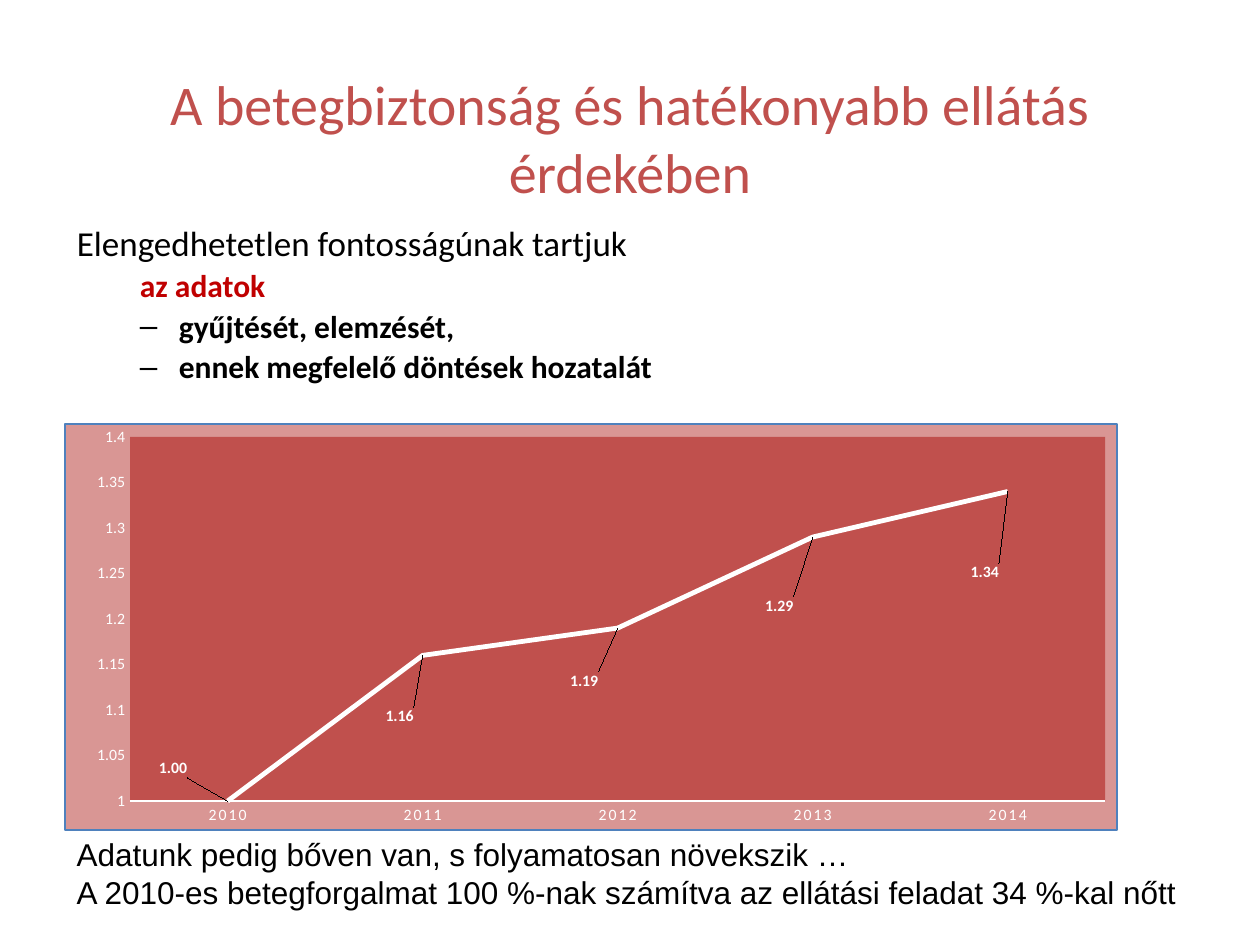
from dataclasses import dataclass

from lxml import etree
from pptx import Presentation
from pptx.chart.data import CategoryChartData
from pptx.dml.color import RGBColor
from pptx.enum.chart import XL_CHART_TYPE, XL_LABEL_POSITION, XL_TICK_MARK
from pptx.enum.text import MSO_ANCHOR, MSO_AUTO_SIZE, PP_ALIGN
from pptx.oxml import parse_xml
from pptx.oxml.ns import qn
from pptx.util import Inches, Pt

LINE = XL_CHART_TYPE.LINE
RIGHT = XL_LABEL_POSITION.RIGHT
NO_TICK = XL_TICK_MARK.NONE
MIDDLE = MSO_ANCHOR.MIDDLE
FIXED = MSO_AUTO_SIZE.NONE
CENTER = PP_ALIGN.CENTER

HEX = {"rose": "C0504D", "pale": "D99694", "deep": "C00000",
       "ink": "000000", "white": "FFFFFF", "blue": "4F81BD"}
WIDE, HIGH = Inches(10), Inches(7.5)
SPACES = ('xmlns:c="http://schemas.openxmlformats.org/drawingml/2006/chart" '
          'xmlns:a="http://schemas.openxmlformats.org/drawingml/2006/main"')
FORM = "#,##0.00"


@dataclass
class Box:
    x: float
    y: float
    w: float
    h: float

    def place(self) -> tuple[int, int, int, int]:
        return (int(self.x * WIDE), int(self.y * HIGH),
                int(self.w * WIDE), int(self.h * HIGH))


@dataclass
class Item:
    text: str
    size: int
    tint: str = "ink"
    bold: bool = False
    level: int = 0
    mark: str = ""


@dataclass
class Spot:
    year: str
    value: float
    dx: float
    dy: float


TITLE = Box(0.05, 0.08, 0.9, 0.13)
BODY = Box(0.051, 0.233, 0.899, 0.644)
CHART = Box(0.051, 0.448, 0.836, 0.431)
NOTE = Box(0.051, 0.877, 0.925, 0.12)
PLOT = Box(0.062, 0.032, 0.927, 0.897)

ITEMS = [
    Item("Elengedhetetlen fontosságúnak tartjuk", 20),
    Item("az adatok", 18, "deep", True, 1),
    Item("gyűjtését, elemzését,", 18, bold=True, level=1, mark="–"),
    Item("ennek megfelelő döntések hozatalát", 18, bold=True, level=1, mark="–"),
]
NOTES = [
    "Adatunk pedig bőven van, s folyamatosan növekszik …",
    "A 2010-es betegforgalmat 100 %-nak számítva az ellátási feladat 34 %-kal nőtt",
]
SPOTS = [
    Spot("2010", 1, -0.07, -0.08),
    Spot("2011", 1.16, -0.04, 0.15),
    Spot("2012", 1.19, -0.05, 0.13),
    Spot("2013", 1.29, -0.05, 0.17),
    Spot("2014", 1.34, -0.04, 0.2),
]


def style(font, size: float, tint: str, face: str = "Calibri", bold: bool = False) -> None:
    font.size, font.name, font.bold = Pt(size), face, bold
    font.color.rgb = RGBColor.from_string(HEX[tint])


def write(frame, text: str, *, first: bool = False, align=None, **form):
    para = frame.paragraphs[0] if first else frame.add_paragraph()
    para.alignment = align
    run = para.add_run()
    run.text = text
    style(run.font, **form)
    return para


def move(shape, box: Box) -> None:
    shape.left, shape.top, shape.width, shape.height = box.place()


def indent(para, item: Item) -> None:
    para.level = item.level
    para.line_spacing = 0.9
    props = para._p.get_or_add_pPr()
    left, hang = (0.81, -0.31) if item.level else (0, 0)
    props.set("marL", str(Inches(left)))
    props.set("indent", str(Inches(hang)))
    if item.mark:
        etree.SubElement(props, qn("a:buChar")).set("char", item.mark)
    else:
        etree.SubElement(props, qn("a:buNone"))


def layout(x: float, y: float, extra: str = "", modes: str = ""):
    return parse_xml(f'<c:layout {SPACES}><c:manualLayout>{modes}<c:x val="{x}"/>'
                     f'<c:y val="{y}"/>{extra}</c:manualLayout></c:layout>')


def paint(fill: str, line: str = ""):
    edge = (f'<a:ln w="9525"><a:solidFill><a:srgbClr val="{HEX[line]}"/></a:solidFill></a:ln>'
            if line else "<a:ln><a:noFill/></a:ln>")
    return parse_xml(f'<c:spPr {SPACES}><a:solidFill><a:srgbClr val="{HEX[fill]}"/>'
                     f"</a:solidFill>{edge}</c:spPr>")


def frame_plot(chart) -> None:
    root = chart.element
    root.xpath("c:chart")[0].addnext(paint("pale", "blue"))
    area = root.xpath("c:chart/c:plotArea")[0]
    for old in area.xpath("c:layout"):
        area.remove(old)
    modes = '<c:layoutTarget val="inner"/><c:xMode val="edge"/><c:yMode val="edge"/>'
    size = f'<c:w val="{PLOT.w}"/><c:h val="{PLOT.h}"/>'
    area.insert(0, layout(PLOT.x, PLOT.y, size, modes))
    area.append(paint("rose"))
    root.xpath(".//c:catAx//a:defRPr")[0].set("spc", "120")


def label(series) -> None:
    marks = series.data_labels
    marks.show_value = True
    marks.number_format, marks.number_format_is_linked = FORM, False
    style(marks.font, 9, "white", bold=True)
    for i, spot in enumerate(SPOTS):
        tag = series.points[i].data_label
        style(tag.font, 9, "white", bold=True)
        tag.position = RIGHT
        node = series._element.xpath(f"c:dLbls/c:dLbl[c:idx/@val='{i}']")[0]
        form = parse_xml(f'<c:numFmt {SPACES} formatCode="{FORM}" sourceLinked="0"/>')
        node.insert(1, layout(spot.dx, spot.dy))
        node.insert(2, form)


def draw_chart(slide) -> None:
    data = CategoryChartData()
    data.categories = [spot.year for spot in SPOTS]
    data.add_series("Series 1", [spot.value for spot in SPOTS])
    chart = slide.shapes.add_chart(LINE, *CHART.place(), data).chart
    chart.has_legend = chart.has_title = False
    style(chart.font, 10, "ink")
    years, scale = chart.category_axis, chart.value_axis
    for axis in (years, scale):
        axis.major_tick_mark = axis.minor_tick_mark = NO_TICK
        axis.has_major_gridlines = False
        style(axis.tick_labels.font, 9, "white")
    years.format.line.color.rgb = RGBColor.from_string(HEX["white"])
    years.format.line.width = Pt(1)
    scale.format.line.fill.background()
    scale.minimum_scale, scale.maximum_scale, scale.major_unit = 1, 1.4, 0.05
    chart.plots[0].vary_by_categories = False
    series = chart.plots[0].series[0]
    series.smooth = False
    series.format.line.color.rgb = RGBColor.from_string(HEX["white"])
    series.format.line.width = Pt(2.75)
    label(series)
    frame_plot(chart)


def main() -> None:
    deck = Presentation()
    deck.slide_width, deck.slide_height = WIDE, HIGH
    slide = deck.slides.add_slide(deck.slide_layouts[1])
    title, body = slide.placeholders
    for shape, box in ((title, TITLE), (body, BODY)):
        move(shape, box)
        shape.text_frame.auto_size = FIXED
    title.text_frame.vertical_anchor = MIDDLE
    write(title.text_frame, "A betegbiztonság és hatékonyabb ellátás érdekében",
          first=True, align=CENTER, size=32, tint="rose")
    for i, item in enumerate(ITEMS):
        para = write(body.text_frame, item.text, first=i == 0,
                     size=item.size, tint=item.tint, bold=item.bold)
        indent(para, item)
    draw_chart(slide)
    note = slide.shapes.add_textbox(*NOTE.place()).text_frame
    note.word_wrap = True
    for i, text in enumerate(NOTES):
        write(note, text, first=i == 0, size=18, tint="ink", face="Arial")
    deck.save("out.pptx")


if __name__ == "__main__":
    main()
